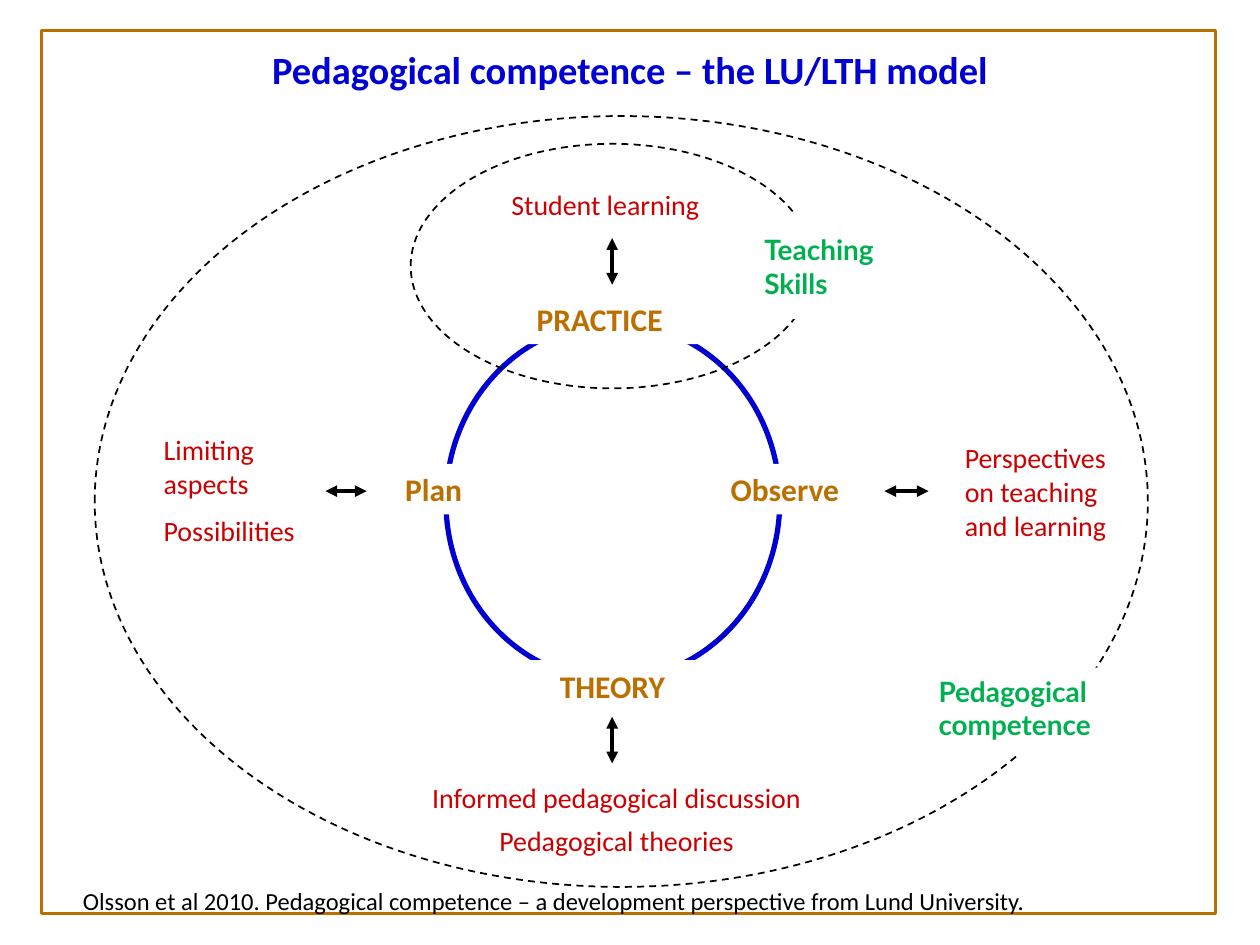
from lxml import etree
from pptx import Presentation
from pptx.dml.color import RGBColor
from pptx.enum.dml import MSO_LINE
from pptx.enum.shapes import MSO_CONNECTOR, MSO_SHAPE
from pptx.enum.text import MSO_ANCHOR, PP_ALIGN
from pptx.oxml.ns import qn
from pptx.util import Cm, Pt

BLUE = RGBColor(0x00, 0x00, 0xD2)
OCHRE = RGBColor(0xBA, 0x6F, 0x00)
RED = RGBColor(0xCC, 0x00, 0x00)
GREEN = RGBColor(0x00, 0xB0, 0x50)
BLACK = RGBColor(0x00, 0x00, 0x00)
WHITE = RGBColor(0xFF, 0xFF, 0xFF)
LEFT, CENTER = PP_ALIGN.LEFT, PP_ALIGN.CENTER

deck = Presentation()
deck.slide_width, deck.slide_height = Cm(25.4), Cm(19.05)
page = deck.slides.add_slide(deck.slide_layouts[6])


def add_outline(kind, place, color, width, dash=None):
    shape = page.shapes.add_shape(kind, *map(Cm, place))
    shape.shadow.inherit = False
    shape.fill.background()
    shape.line.color.rgb = color
    shape.line.width = Pt(width)
    if dash:
        shape.line.dash_style = dash


def add_label(place, lines, size, color, bold=False, align=LEFT, gap=0,
              font="Calibri", filled=True):
    """Write one paragraph per line, on white when filled."""
    if filled:
        box = page.shapes.add_shape(MSO_SHAPE.RECTANGLE, *map(Cm, place))
        box.shadow.inherit = False
        box.fill.solid()
        box.fill.fore_color.rgb = WHITE
        box.line.fill.background()
    else:
        box = page.shapes.add_textbox(*map(Cm, place))
    frame = box.text_frame
    frame.word_wrap = True
    frame.vertical_anchor = MSO_ANCHOR.TOP
    frame.margin_left = frame.margin_right = Cm(0.25)
    frame.margin_top = frame.margin_bottom = Cm(0.13)
    for index, line in enumerate(lines):
        para = frame.paragraphs[0] if index == 0 else frame.add_paragraph()
        para.text = line
        para.alignment = align
        if index and gap:
            para.space_before = Pt(gap)
        para.font.name = font
        para.font.size = Pt(size)
        para.font.bold = bold
        para.font.color.rgb = color
    return box


# Frame and title
add_outline(MSO_SHAPE.RECTANGLE, (0.84, 0.61, 23.67, 17.81), OCHRE, 1.5)
title = add_label((0, 0.61, 25.4, 1.32), ["Pedagogical competence – the LU/LTH model"],
                  22, BLUE, bold=True, align=CENTER, filled=False)
title.text_frame.paragraphs[0].line_spacing = 1.2

# Cycle with its four stages
add_outline(MSO_SHAPE.OVAL, (8.99, 6.5, 6.73, 7.21), BLUE, 3)
for place, stage, align in [
    ((10.57, 5.92, 3.89, 1.02), "PRACTICE", LEFT),
    ((14.48, 9.35, 3.89, 1.02), "Observe", LEFT),
    ((7.92, 9.35, 2.49, 1.02), "Plan", LEFT),
    ((10.59, 13.31, 3.51, 1.02), "THEORY", CENTER),
]:
    add_label(place, [stage], 18, OCHRE, bold=True, align=align)

# What each stage relates to
add_label((10.06, 3.66, 4.6, 0.91), ["Student learning"], 16, RED)
add_label((7.92, 15.6, 9.02, 1.8),
          ["Informed pedagogical discussion", "Pedagogical theories"],
          16, RED, align=CENTER, gap=5.5)
aspects = add_label((3.05, 8.59, 3.51, 2.62), ["Limiting aspects", "Possibilities"],
                    16, RED, gap=8)
add_label((19.2, 8.76, 3.71, 2.29), ["Perspectives\non teaching and learning"], 16, RED)

# Double-headed arrows
for start_x, start_y, end_x, end_y, source in [
    (12.34, 4.8, 12.34, 5.74, None),
    (12.34, 14.45, 12.34, 15.39, None),
    (6.56, 9.9, 7.39, 9.9, aspects),
    (17.83, 9.9, 18.72, 9.9, None),
]:
    arrow = page.shapes.add_connector(
        MSO_CONNECTOR.STRAIGHT, Cm(start_x), Cm(start_y), Cm(end_x), Cm(end_y))
    if source:
        arrow.begin_connect(source, 3)
    arrow.line.color.rgb = BLACK
    arrow.line.width = Pt(2.25)
    for end in ("a:headEnd", "a:tailEnd"):
        etree.SubElement(arrow.line._get_or_add_ln(), qn(end), type="triangle")
    etree.SubElement(arrow._element.spPr, qn("a:effectLst"))

# Dashed areas and their names
for place in [(8.28, 2.9, 8.13, 4.93), (1.91, 2.34, 21.23, 15.54)]:
    add_outline(MSO_SHAPE.OVAL, place, BLACK, 1, MSO_LINE.DASH)
skills = add_label((15.16, 4.27, 4.04, 2.16), ["Teaching\nSkills"],
                   16, GREEN, bold=True, font="Lato")
skills.text_frame.margin_top = Cm(0.42)
add_label((18.67, 13.46, 5.21, 1.78), ["Pedagogical", "competence"],
          16, GREEN, bold=True, font="Lato")

# Reference
add_label((1.42, 17.73, 23.09, 0.86),
          ["Olsson et al 2010. Pedagogical competence – "
           "a development perspective from Lund University."],
          14, BLACK, filled=False)

deck.save("out.pptx")
